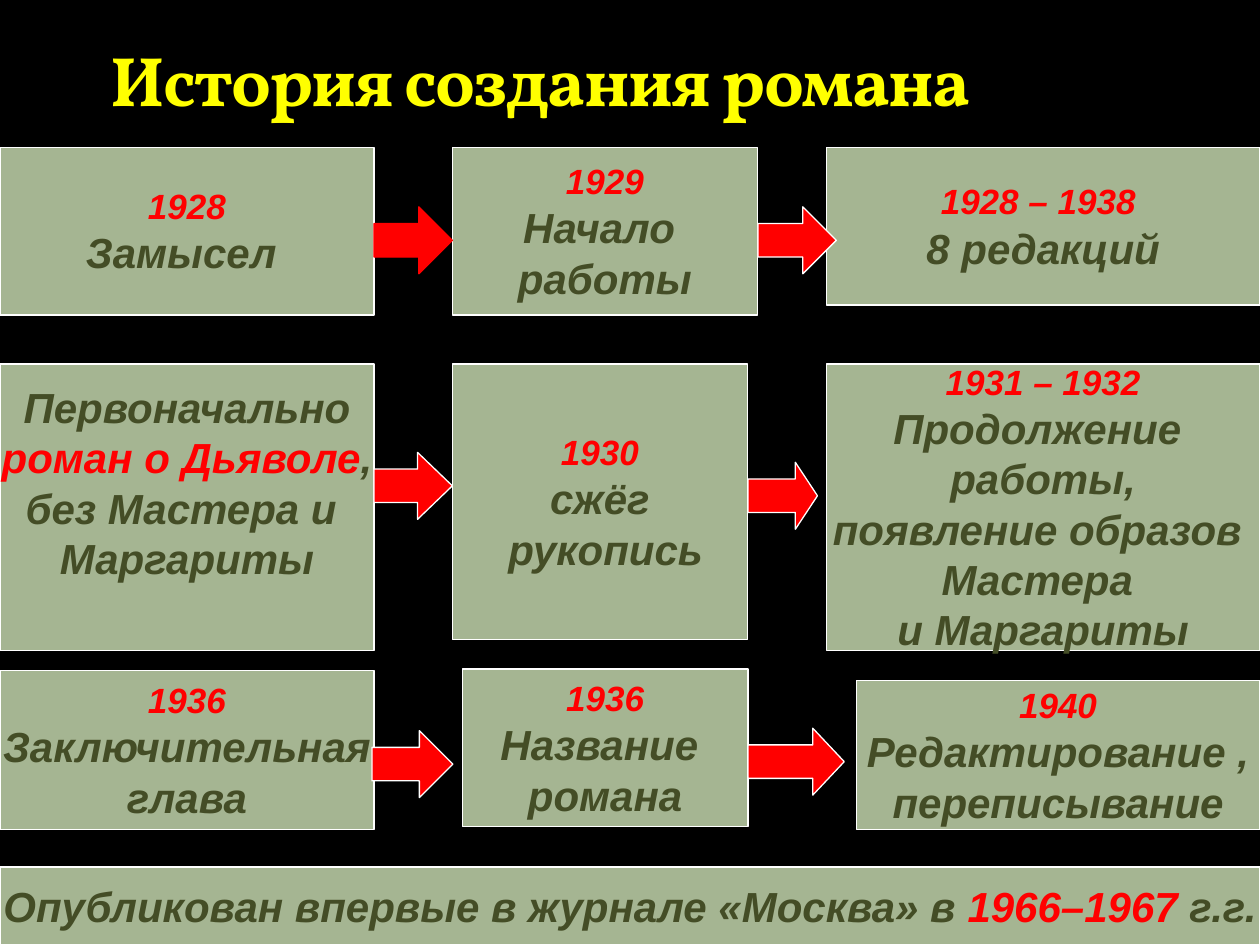
from lxml import etree
from pptx import Presentation
from pptx.dml.color import RGBColor
from pptx.enum.shapes import MSO_SHAPE as SHAPE
from pptx.enum.text import MSO_ANCHOR as ANCHOR, MSO_AUTO_SIZE as FIT, PP_ALIGN as ALIGN
from pptx.oxml.ns import qn
from pptx.util import Cm, Pt

COLORS = {
    "back": "000000",
    "title": "FFFF00",
    "outline": "3C4422",
    "box": "A5B592",
    "line": "FFFFFF",
    "text": "444D26",
    "accent": "FF0000",
}

# Left, top, width, height in cm; date; lines, with *accented* parts
BOXES = [
    (0, 2.97, 7.54, 3.38, "1928", ["Замысел "]),
    (9.12, 2.97, 6.15, 3.38, "1929", ["Начало ", "работы"]),
    (16.66, 2.97, 8.74, 3.18, "1928 – 1938 ", ["8 редакций"]),
    (0, 7.34, 7.54, 5.77, None,
     ["Первоначально", "*роман о Дьяволе*,", "без Мастера и ", "Маргариты"]),
    (9.12, 7.34, 5.95, 5.56, "1930", ["сжёг", " рукопись"]),
    (16.66, 7.34, 8.74, 5.77, "1931 – 1932",
     ["Продолжение ", "работы,", "появление образов ", "Мастера ", "и Маргариты"]),
    (0, 13.52, 7.54, 3.2, "1936", ["Заключительная", "глава"]),
    (9.32, 13.49, 5.76, 3.18, "1936", ["Название ", "романа"]),
    (17.26, 13.72, 8.14, 3.0, "1940", ["Редактирование ,", "переписывание"]),
    (0, 17.48, 25.4, 1.57, None,
     ["Опубликован впервые в журнале «Москва» в *1966–1967 *г.г."]),
]
ORIGIN_BOX = 3  # its text sits above the middle

# Left, top, width in cm; head length; line colour
ARROWS = [
    (7.54, 4.17, 1.58, 0.5, "accent"),
    (15.28, 4.17, 1.58, 0.5, "line"),
    (7.54, 9.12, 1.58, 0.52, "line"),
    (15.08, 9.32, 1.4, 0.33, "line"),
    (7.5, 14.73, 1.63, 0.5, "line"),
    (15.08, 14.68, 1.94, 0.47, "line"),
]
ARROW_HEIGHT = 1.35


def rgb(name):
    return RGBColor.from_string(COLORS[name])


def add_block(slide, kind, box, fill, line):
    s = slide.shapes.add_shape(kind, *(Cm(v) for v in box))
    s.shadow.inherit = False
    s.fill.solid()
    s.fill.fore_color.rgb = rgb(fill)
    s.line.color.rgb = rgb(line)
    s.line.width = Pt(0.75)
    return s


def write_line(p, text, size, color):
    p.alignment = ALIGN.CENTER
    font = p.font
    font.name, font.size, font.bold, font.italic = "Arial", Pt(size), True, True
    font.color.rgb = rgb(color)
    for i, part in enumerate(text.split("*")):
        if part:
            r = p.add_run()
            r.text = part
            if i % 2:
                r.font.color.rgb = rgb("accent")


def add_box(slide, box, date, lines):
    s = add_block(slide, SHAPE.RECTANGLE, box, "box", "line")
    tf = s.text_frame
    tf.word_wrap = False
    tf.vertical_anchor = ANCHOR.MIDDLE
    rows = [(line, 24, "text") for line in lines]
    if date:
        rows.insert(0, (date, 20, "accent"))
    for i, row in enumerate(rows):
        p = tf.add_paragraph() if i else tf.paragraphs[0]
        write_line(p, *row)
    return s


def add_arrow(slide, left, top, width, head, line):
    box = (left, top, width, ARROW_HEIGHT)
    s = add_block(slide, SHAPE.RIGHT_ARROW, box, "accent", line)
    s.adjustments[1] = head


def set_title(slide, text):
    s = slide.shapes.title
    s.left, s.top, s.width, s.height = Cm(1.98), Cm(0.58), Cm(21.59), Cm(1.98)
    tf = s.text_frame
    tf.auto_size = FIT.NONE
    tf.vertical_anchor = ANCHOR.BOTTOM
    p = tf.paragraphs[0]
    p.alignment = ALIGN.LEFT
    r = p.add_run()
    r.text = text
    font = r.font
    font.name, font.size, font.bold = "Vollkorn", Pt(40), True
    font.color.rgb = rgb("title")
    # Tight spacing and a faint letter outline
    rPr = r._r.get_or_add_rPr()
    rPr.set("spc", "-100")
    ln = etree.Element(qn("a:ln"), w="3175")
    fill = etree.SubElement(ln, qn("a:solidFill"))
    clr = etree.SubElement(fill, qn("a:srgbClr"), val=COLORS["outline"])
    etree.SubElement(clr, qn("a:alpha"), val="25000")
    rPr.insert(0, ln)


def main():
    prs = Presentation()
    prs.slide_width, prs.slide_height = Cm(25.4), Cm(19.05)
    slide = prs.slides.add_slide(prs.slide_layouts[5])
    slide.background.fill.solid()
    slide.background.fill.fore_color.rgb = rgb("back")

    set_title(slide, "История создания романа")

    # Stages of the work, then the arrows between them
    boxes = [add_box(slide, row[:4], *row[4:]) for row in BOXES]
    boxes[ORIGIN_BOX].text_frame.margin_bottom = Cm(1.14)
    for arrow in ARROWS:
        add_arrow(slide, *arrow)

    prs.save("out.pptx")


if __name__ == "__main__":
    main()
